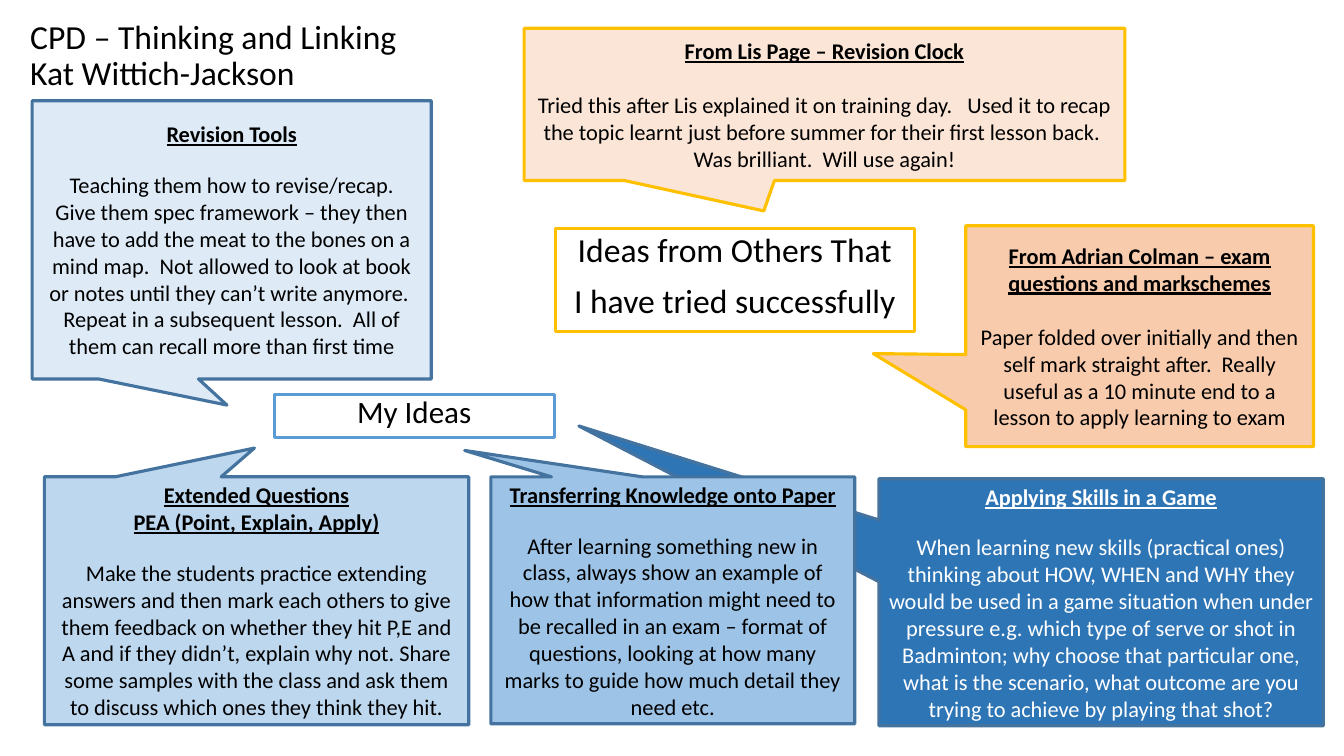
import pptx
import pptx.util
import pptx.dml.color
import pptx.enum.shapes
import pptx.enum.text

Pt = pptx.util.Pt
RGBColor = pptx.dml.color.RGBColor
SHAPE = pptx.enum.shapes.MSO_SHAPE
ANCHOR = pptx.enum.text.MSO_ANCHOR
ALIGN = pptx.enum.text.PP_ALIGN
AUTO_SIZE = pptx.enum.text.MSO_AUTO_SIZE

BLACK = RGBColor(0x00, 0x00, 0x00)
WHITE = RGBColor(0xFF, 0xFF, 0xFF)
STEEL = RGBColor(0x43, 0x73, 0x9E)
SKY = RGBColor(0x5B, 0x9B, 0xD5)
GOLD = RGBColor(0xFF, 0xC0, 0x00)
BLUE_PALE = RGBColor(0xDE, 0xEB, 0xF7)
BLUE_LIGHT = RGBColor(0xBD, 0xD7, 0xEE)
BLUE_MID = RGBColor(0x9D, 0xC3, 0xE6)
BLUE_DARK = RGBColor(0x2E, 0x75, 0xB6)
PEACH_PALE = RGBColor(0xFB, 0xE5, 0xD6)
PEACH = RGBColor(0xF8, 0xCB, 0xAD)

FONT = "Calibri"
BORDER = 2.25
TEXT_SIZE = 16

# Each callout: box, tail tip, fill, border, text colour, gap, headings, body
CALLOUTS = [
    ((23, 72, 285.1, 198.7), (-0.012, 0.594), BLUE_PALE, STEEL, BLACK, 17,
     ["Revision Tools"],
     ["Teaching them how to revise/recap.",
      "Give them spec framework – they then have to add the meat to the bones "
      "on a mind map.  Not allowed to look at book or notes until they can’t "
      "write anymore.  Repeat in a subsequent lesson.  All of them can recall "
      "more than first time"]),
    ((31.7, 340.6, 303.1, 177.1), (-0.005, -0.616), BLUE_LIGHT, STEEL, BLACK, 17,
     ["Extended Questions", "PEA (Point, Explain, Apply)"],
     ["Make the students practice extending answers and then mark each others "
      "to give them feedback on whether they hit P,E and A and if they didn’t, "
      "explain why not. Share some samples with the class and ask them to "
      "discuss which ones they think they hit."]),
    ((627.8, 342, 317.5, 176.4), (-1.175, -0.714), BLUE_DARK, STEEL, WHITE, 17,
     ["Applying Skills in a Game"],
     ["When learning new skills (practical ones) thinking about HOW, WHEN and "
      "WHY they would be used in a game situation when under pressure e.g. "
      "which type of serve or shot in Badminton; why choose that particular "
      "one, what is the scenario, what outcome are you trying to achieve by "
      "playing that shot?"]),
    ((350.6, 340.6, 259.9, 176.4), (-0.572, -0.607), BLUE_MID, STEEL, BLACK, 17,
     ["Transferring Knowledge onto Paper"],
     ["After learning something new in class, always show an example of how "
      "that information might need to be recalled in an exam – format of "
      "questions, looking at how many marks to guide how much detail they "
      "need etc."]),
    ((374.4, 20.2, 429.1, 108.7), (-0.101, 0.7), PEACH_PALE, GOLD, BLACK, 19.5,
     ["From Lis Page – Revision Clock"],
     ["Tried this after Lis explained it on training day.   Used it to recap "
      "the topic learnt just before summer for their first lesson back.  Was "
      "brilliant.  Will use again!"]),
    ((689.8, 161.3, 248.4, 157.7), (-0.766, 0.079), PEACH, GOLD, BLACK, 19.5,
     ["From Adrian Colman – exam questions and markschemes"],
     ["Paper folded over initially and then self mark straight after.  Really "
      "useful as a 10 minute end to a lesson to apply learning to exam"]),
]


def set_values(target, values):
    for name, value in values.items():
        setattr(target, name, value)


def place(part, box):
    names = ("left", "top", "width", "height")
    set_values(part, dict(zip(names, map(Pt, box))))


def set_frame(frame, anchor):
    set_values(frame, {"word_wrap": True, "auto_size": AUTO_SIZE.NONE,
                       "vertical_anchor": anchor})


def write_paragraphs(frame, lines, paragraph_values, font_values, colour):
    """Fill the first paragraph if it is still empty, then append."""
    for line in lines:
        first = frame.paragraphs[0]
        paragraph = first if not first.runs else frame.add_paragraph()
        set_values(paragraph, paragraph_values)
        run = paragraph.add_run()
        run.text = line
        set_values(run.font, {"name": FONT, **font_values})
        run.font.color.rgb = colour


def set_border(part, colour):
    part.line.color.rgb = colour
    part.line.width = Pt(BORDER)


def write_title(title, box, lines):
    place(title, box)
    frame = title.text_frame
    set_frame(frame, ANCHOR.BOTTOM)
    paragraph = frame.paragraphs[0]
    set_values(paragraph, {"alignment": ALIGN.LEFT, "line_spacing": 0.9})
    for index, line in enumerate(lines):
        if index:
            paragraph.add_line_break()
        run = paragraph.add_run()
        run.text = line
        set_values(run.font, {"name": FONT, "size": Pt(24), "bold": False})
        run.font.color.rgb = BLACK


def write_label(label, box, lines, border, size, spacing):
    place(label, box)
    label.fill.background()
    set_border(label, border)
    set_frame(label.text_frame, ANCHOR.TOP)
    write_paragraphs(label.text_frame, lines,
                     {"alignment": ALIGN.CENTER, "line_spacing": spacing,
                      "space_before": Pt(10)},
                     {"size": Pt(size)}, BLACK)


def add_callout(slide, box, tail, fill, border, colour, gap, headings, body):
    callout = slide.shapes.add_shape(SHAPE.RECTANGULAR_CALLOUT, *map(Pt, box))
    callout.shadow.inherit = False
    callout.adjustments[0], callout.adjustments[1] = tail
    callout.fill.solid()
    callout.fill.fore_color.rgb = fill
    set_border(callout, border)
    frame = callout.text_frame
    set_frame(frame, ANCHOR.MIDDLE)
    centred = {"alignment": ALIGN.CENTER}
    write_paragraphs(frame, headings, centred,
                     {"size": Pt(TEXT_SIZE), "bold": True, "underline": True}, colour)
    frame.paragraphs[-1].space_after = Pt(gap)
    write_paragraphs(frame, body, centred, {"size": Pt(TEXT_SIZE)}, colour)


def main():
    deck = pptx.Presentation()
    set_values(deck, {"slide_width": Pt(960), "slide_height": Pt(540)})
    slide = deck.slides.add_slide(deck.slide_layouts[0])

    # Title and the label for own ideas
    write_title(slide.shapes.title, (14.4, 9.4, 686.9, 60.5),
                ["CPD – Thinking and Linking", "Kat Wittich-Jackson"])
    write_label(slide.placeholders[1], (195.8, 281.5, 200.2, 31),
                ["My Ideas"], SKY, 22.2, 0.8)

    # Callouts for each idea
    for callout in CALLOUTS:
        add_callout(slide, *callout)

    # Label for ideas from others
    others_box = (396.7, 163.4, 256.3, 73.4)
    others = slide.shapes.add_shape(SHAPE.RECTANGLE, *map(Pt, others_box))
    others.shadow.inherit = False
    write_label(others, others_box,
                ["Ideas from Others That", "I have tried successfully"], GOLD, 24, 0.9)

    deck.save("out.pptx")


if __name__ == "__main__":
    main()
